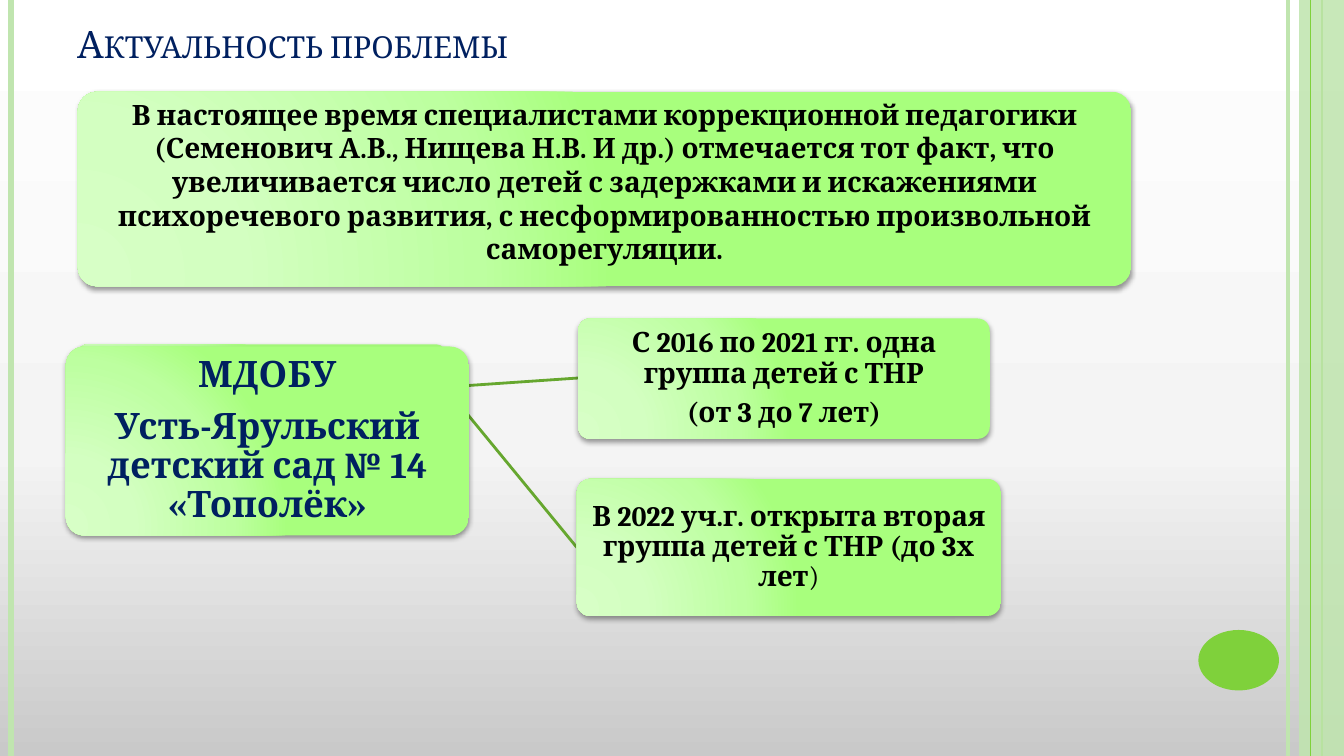
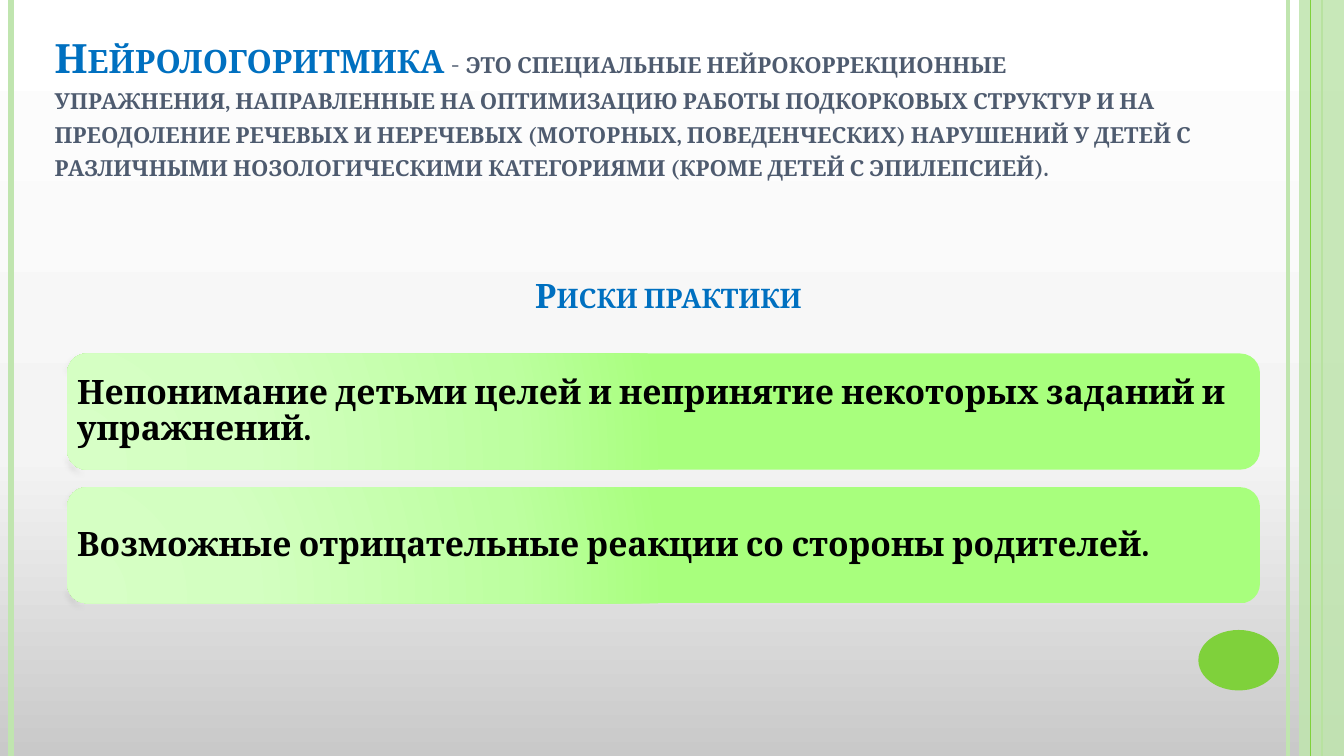
from lxml.etree import SubElement
from pptx import Presentation
from pptx.dml.color import RGBColor
from pptx.enum.shapes import MSO_CONNECTOR, MSO_SHAPE
from pptx.enum.text import MSO_ANCHOR, PP_ALIGN
from pptx.oxml.ns import qn
from pptx.util import Pt

WIDTH, HEIGHT = 960, 540
FONT = "Cambria"
GREEN, PALE_GREEN, LINE_GREEN = "7FD13B", "C0E5AF", "66A72F"
NAVY, BLUE, SLATE, BLACK = "002060", "0070C0", "4E5B6F", "000000"
BACKGROUND_STOPS = [(0, "C9C9C9"), (40, "F4F4F4"), (100, "FFFFFF")]
CARD_STOPS = [(0, "D7FFC6"), (30, "D3FFC1"), (75, "BDFFA0"), (100, "A8FF7D")]
color = RGBColor.from_string


def set_gradient(owner, fill, stops):
    fill.gradient()
    gradient = owner.element.find(".//" + qn("a:gradFill"))
    for child in list(gradient):
        gradient.remove(child)
    stop_list = SubElement(gradient, qn("a:gsLst"))
    for position, value in stops:
        stop = SubElement(stop_list, qn("a:gs"), pos=str(position * 1000))
        SubElement(stop, qn("a:srgbClr"), val=value)
    return gradient


def format_runs(paragraph, runs, size, value, bold=True):
    for run in runs:
        run.font.name = FONT
        run.font.size = Pt(size)
        run.font.bold = bold
        run.font.color.rgb = color(value)


presentation = Presentation()
presentation.slide_width, presentation.slide_height = Pt(WIDTH), Pt(HEIGHT)
blank_layout = presentation.slide_layouts[6]
slides = [presentation.slides.add_slide(blank_layout) for _ in range(2)]
problem_slide, risk_slide = slides

connectors = [
    (problem_slide, 318, 276.5, 413, 270, LINE_GREEN, 2),
    (problem_slide, 318, 276.5, 412, 391, LINE_GREEN, 2),
]

for slide in slides:
    gradient = set_gradient(slide, slide.background.fill, BACKGROUND_STOPS)
    SubElement(gradient, qn("a:lin"), ang="16200000", scaled="0")
    for preset, left, top, width, height, value in [
        (MSO_SHAPE.RECTANGLE, 928, 0, 32, HEIGHT, PALE_GREEN),
        (MSO_SHAPE.OVAL, 856, 450, 57.6, 43.2, GREEN),
    ]:
        shape = slide.shapes.add_shape(preset, Pt(left), Pt(top), Pt(width), Pt(height))
        shape.shadow.inherit = False
        shape.fill.solid()
        shape.fill.fore_color.rgb = color(value)
        shape.line.fill.background()
        if preset == MSO_SHAPE.RECTANGLE:
            SubElement(shape.element.find(".//" + qn("a:srgbClr")), qn("a:alpha"), val="87000")
    for x, value, weight in [
        (8, PALE_GREEN, 4.5),
        (920, PALE_GREEN, 3),
        (936, GREEN, 0.75),
        (944, "B8E2A0", 1.5),
    ]:
        connectors.append((slide, x, 0, x, HEIGHT, value, weight))

for slide, start_x, start_y, end_x, end_y, value, weight in connectors:
    connector = slide.shapes.add_connector(
        MSO_CONNECTOR.STRAIGHT, Pt(start_x), Pt(start_y), Pt(end_x), Pt(end_y))
    connector.line.color.rgb = color(value)
    connector.line.width = Pt(weight)
    SubElement(connector.element.spPr, qn("a:effectLst"))

cards = [
    (problem_slide, 56, 246, 262, 61, "", 20, BLACK, 0.9, 0),
    (problem_slide, 413, 227.5, 294, 86,
     "С 2016 по 2021 гг. одна группа детей с ТНР\n(от 3 до 7 лет)", 20, BLACK, 0.9, 0),
    (problem_slide, 412, 342, 303, 98,
     "В 2022 уч.г. открыта вторая группа детей с ТНР (до 3х лет", 20, BLACK, 0.9, 0),
    (problem_slide, 47, 247.5, 288, 135,
     "МДОБУ\nУсть-Ярульский\vдетский сад № 14 «Тополёк»", 26, NAVY, 0.9, 0),
    (problem_slide, 55.5, 65.5, 752.5, 139,
     "В настоящее время специалистами коррекционной педагогики (Семенович А.В., "
     "Нищева Н.В. И др.) отмечается тот факт, что увеличивается число детей с "
     "задержками и искажениями психоречевого развития, с несформированностью "
     "произвольной саморегуляции.", 20, BLACK, 1, 11),
    (risk_slide, 48, 252.5, 852, 83,
     "Непонимание детьми целей и непринятие некоторых заданий и упражнений.",
     24, BLACK, 0.9, 0),
    (risk_slide, 48, 348, 852, 83,
     "Возможные отрицательные реакции со стороны родителей.", 24, BLACK, 0.9, 0),
]
for slide, left, top, width, height, text, size, value, spacing, bottom in cards:
    centred = slide is problem_slide
    card = slide.shapes.add_shape(
        MSO_SHAPE.ROUNDED_RECTANGLE, Pt(left), Pt(top), Pt(width), Pt(height))
    card.adjustments[0] = 0.1 if centred else 0.17
    card.line.fill.background()
    gradient = set_gradient(card, card.fill, CARD_STOPS)
    path_fill = SubElement(gradient, qn("a:path"), path="circle")
    SubElement(path_fill, qn("a:fillToRect"), l="5000", t="100000", r="120000", b="10000")
    card.shadow.inherit = False
    shadow = SubElement(
        card.element.find(".//" + qn("a:effectLst")), qn("a:outerShdw"),
        blurRad=str(Pt(4)), dist=str(Pt(2)), dir="5400000", rotWithShape="0")
    SubElement(SubElement(shadow, qn("a:srgbClr"), val=BLACK), qn("a:alpha"), val="40000")
    frame = card.text_frame
    frame.word_wrap = True
    frame.vertical_anchor = MSO_ANCHOR.MIDDLE
    frame.margin_left = frame.margin_right = Pt(0 if centred else 3)
    frame.margin_top, frame.margin_bottom = Pt(0), Pt(bottom)
    frame.text = text
    for index, paragraph in enumerate(frame.paragraphs):
        paragraph.alignment = PP_ALIGN.CENTER if centred else PP_ALIGN.LEFT
        paragraph.line_spacing = spacing
        paragraph.space_before = Pt(size / 3 if index else 0)
        format_runs(paragraph, paragraph.runs, size, value)
    if text.endswith("(до 3х лет"):
        closing_run = paragraph.add_run()
        closing_run.text = ")"
        format_runs(paragraph, [closing_run], size, value, False)

headings = [
    (problem_slide, 48, 21.5, 784, 29.5, MSO_ANCHOR.BOTTOM, PP_ALIGN.LEFT,
     [("Актуальность проблемы", 27, NAVY, False)]),
    (risk_slide, 32, 20.5, 880, 130, MSO_ANCHOR.TOP, PP_ALIGN.LEFT,
     [("Нейрологоритмика", 28.8, BLUE, True),
      (" ", 25.2, BLUE, False),
      ("- ", 24.3, SLATE, False),
      ("это специальные нейрокоррекционные\vупражнения, направленные на оптимизацию "
       "работы подкорковых структур и на преодоление речевых и неречевых (моторных, "
       "поведенческих) нарушений у детей с различными нозологическими категориями "
       "(кроме детей с эпилепсией).", 19.8, SLATE, True)]),
    (risk_slide, 70, 193, 815, 36, MSO_ANCHOR.TOP, PP_ALIGN.CENTER,
     [("Риски практики", 24, BLUE, True)]),
]
for slide, left, top, width, height, anchor, alignment, parts in headings:
    heading = slide.shapes.add_textbox(Pt(left), Pt(top), Pt(width), Pt(height))
    frame = heading.text_frame
    frame.word_wrap = True
    frame.vertical_anchor = anchor
    paragraph = frame.paragraphs[0]
    paragraph.alignment = alignment
    for text, size, value, bold in parts:
        for index, line in enumerate(text.split("\v")):
            if index:
                paragraph.add_line_break()
            run = paragraph.add_run()
            run.text = line
            format_runs(paragraph, [run], size, value, bold)
    for properties in heading.element.iter(qn("a:rPr")):
        properties.set("cap", "small")

presentation.save("out.pptx")
